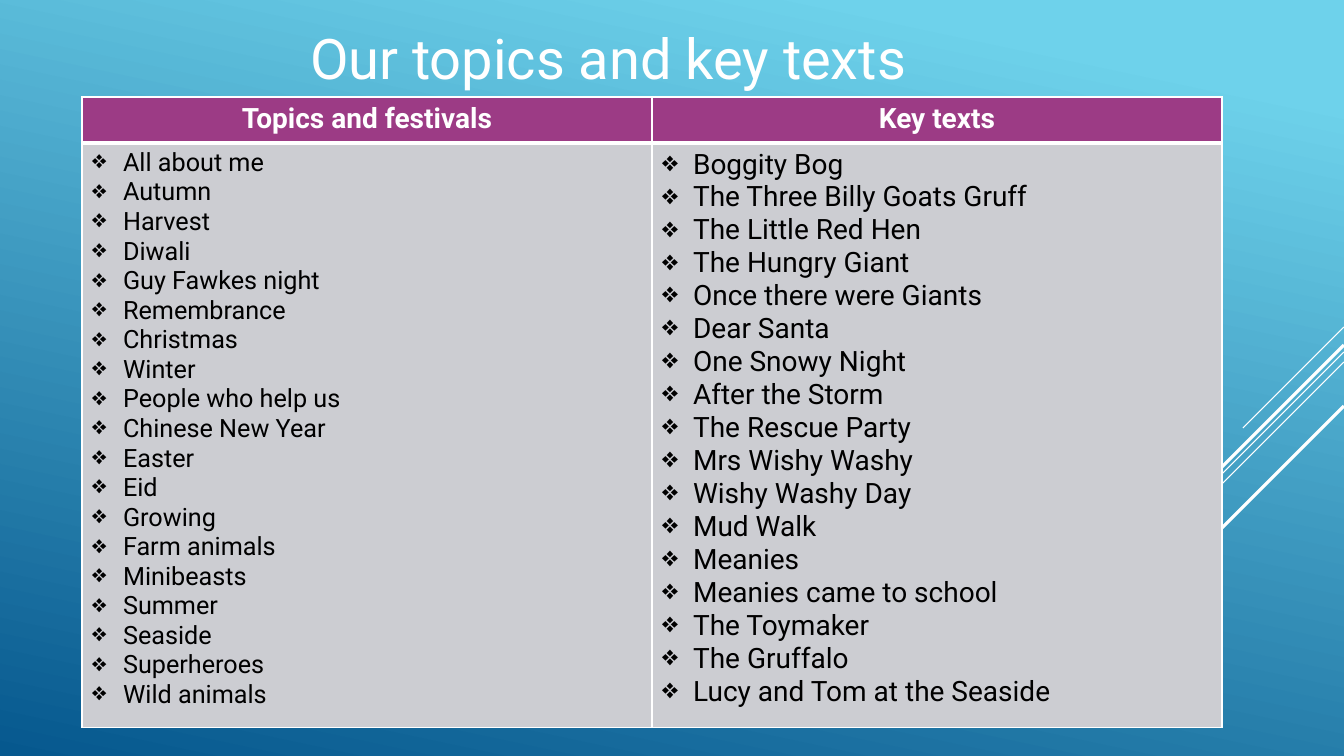
from lxml import etree
from pptx import Presentation
from pptx.dml.color import RGBColor
from pptx.enum.shapes import MSO_CONNECTOR
from pptx.enum.text import MSO_ANCHOR, PP_ALIGN
from pptx.oxml.ns import qn
from pptx.util import Pt

PX = 12192000 / 1344
STRAIGHT = MSO_CONNECTOR.STRAIGHT
MIDDLE = MSO_ANCHOR.MIDDLE
CENTER, LEFT = PP_ALIGN.CENTER, PP_ALIGN.LEFT

FONT = "Roboto"
WHITE = RGBColor(0xFF, 0xFF, 0xFF)
BLACK = RGBColor(0x00, 0x00, 0x00)
SKY = RGBColor(0x6E, 0xD2, 0xEB)
NAVY = RGBColor(0x06, 0x58, 0x8E)
PLUM = RGBColor(0x9C, 0x3B, 0x85)
GREY = RGBColor(0xCC, 0xCD, 0xD2)

# Height at the right edge, run of the diagonal, line width in points
DIAGONALS = [(327, 101, 0.75), (352, 329, 0.75), (362, 209, 0.75),
             (345, 193, 2.25), (406, 140, 2.25)]

TOPICS = ["All about me", "Autumn", "Harvest", "Diwali", "Guy Fawkes night",
          "Remembrance", "Christmas", "Winter", "People who help us",
          "Chinese New Year", "Easter", "Eid", "Growing", "Farm animals",
          "Minibeasts", "Summer", "Seaside", "Superheroes", "Wild animals"]
TEXTS = ["Boggity Bog", "The Three Billy Goats Gruff", "The Little Red Hen",
         "The Hungry Giant", "Once there were Giants", "Dear Santa",
         "One Snowy Night", "After the Storm", "The Rescue Party",
         "Mrs Wishy Washy", "Wishy Washy Day", "Mud Walk", "Meanies",
         "Meanies came to school", "The Toymaker", "The Gruffalo",
         "Lucy and Tom at the Seaside"]
COLUMNS = [("Topics and festivals", TOPICS, 18), ("Key texts", TEXTS, 20)]


def px(n):
    return round(n * PX)


def write(tf, lines, size, color, bold=False, align=LEFT, bullet=None):
    for i, line in enumerate(lines):
        p = tf.add_paragraph() if i else tf.paragraphs[0]
        p.alignment = align
        if bullet:
            pPr = p._p.get_or_add_pPr()
            pPr.set("marL", str(px(31)))
            pPr.set("indent", str(-px(31)))
            etree.SubElement(pPr, qn("a:buChar"), char=bullet)
        r = p.add_run()
        r.text = line
        r.font.name = FONT
        r.font.size = Pt(size)
        r.font.bold = bold
        r.font.color.rgb = color


def paint_background(s):
    fill = s.background.fill
    fill.gradient()
    fill.gradient_angle = 360 - 102
    for stop, position, color in zip(fill.gradient_stops, (0.1, 1), (SKY, NAVY)):
        stop.position = position
        stop.color.rgb = color


def add_diagonals(s, right):
    for y, run, width in DIAGONALS:
        line = s.shapes.add_connector(STRAIGHT, px(right), px(y),
                                      px(right - run), px(y + run))
        line.line.color.rgb = WHITE
        line.line.width = Pt(width)
        etree.SubElement(line._element.spPr, qn("a:effectLst"))


def add_title(s, x, y, w, h):
    tf = s.shapes.add_textbox(px(x), px(y), px(w), px(h)).text_frame
    tf.word_wrap = True
    tf.vertical_anchor = MIDDLE
    write(tf, ["Our topics and key texts"], 40, WHITE, align=CENTER)


def style_cell(cell, color, top=1, bottom=1):
    """Fill the cell and give it white borders, widths in points."""
    tcPr = cell._tc.get_or_add_tcPr()
    for side, width in (("L", 1), ("R", 1), ("T", top), ("B", bottom)):
        ln = etree.SubElement(tcPr, qn(f"a:ln{side}"), w=str(Pt(width)))
        solid = etree.SubElement(ln, qn("a:solidFill"))
        etree.SubElement(solid, qn("a:srgbClr"), val=str(WHITE))
    cell.fill.solid()
    cell.fill.fore_color.rgb = color


def add_topics_table(s, x, y, w, h, header_h):
    table = s.shapes.add_table(2, len(COLUMNS), px(x), px(y), px(w), px(h)).table
    table.horz_banding = False
    table.rows[0].height = px(header_h)
    table.rows[1].height = px(h - header_h)
    for i, (heading, items, size) in enumerate(COLUMNS):
        table.columns[i].width = px(w // len(COLUMNS))
        head, body = table.cell(0, i), table.cell(1, i)
        style_cell(head, PLUM, bottom=3)
        style_cell(body, GREY, top=3)
        write(head.text_frame, [heading], 20, WHITE, bold=True, align=CENTER)
        write(body.text_frame, items, size, BLACK, bullet="❖")


def main():
    prs = Presentation()
    prs.slide_width, prs.slide_height = px(1344), px(756)
    s = prs.slides.add_slide(prs.slide_layouts[6])
    paint_background(s)
    add_diagonals(s, 1344)
    add_title(s, 138, 18, 940, 79)
    add_topics_table(s, 82, 97, 1140, 618, 46)
    prs.save("out.pptx")


if __name__ == "__main__":
    main()
